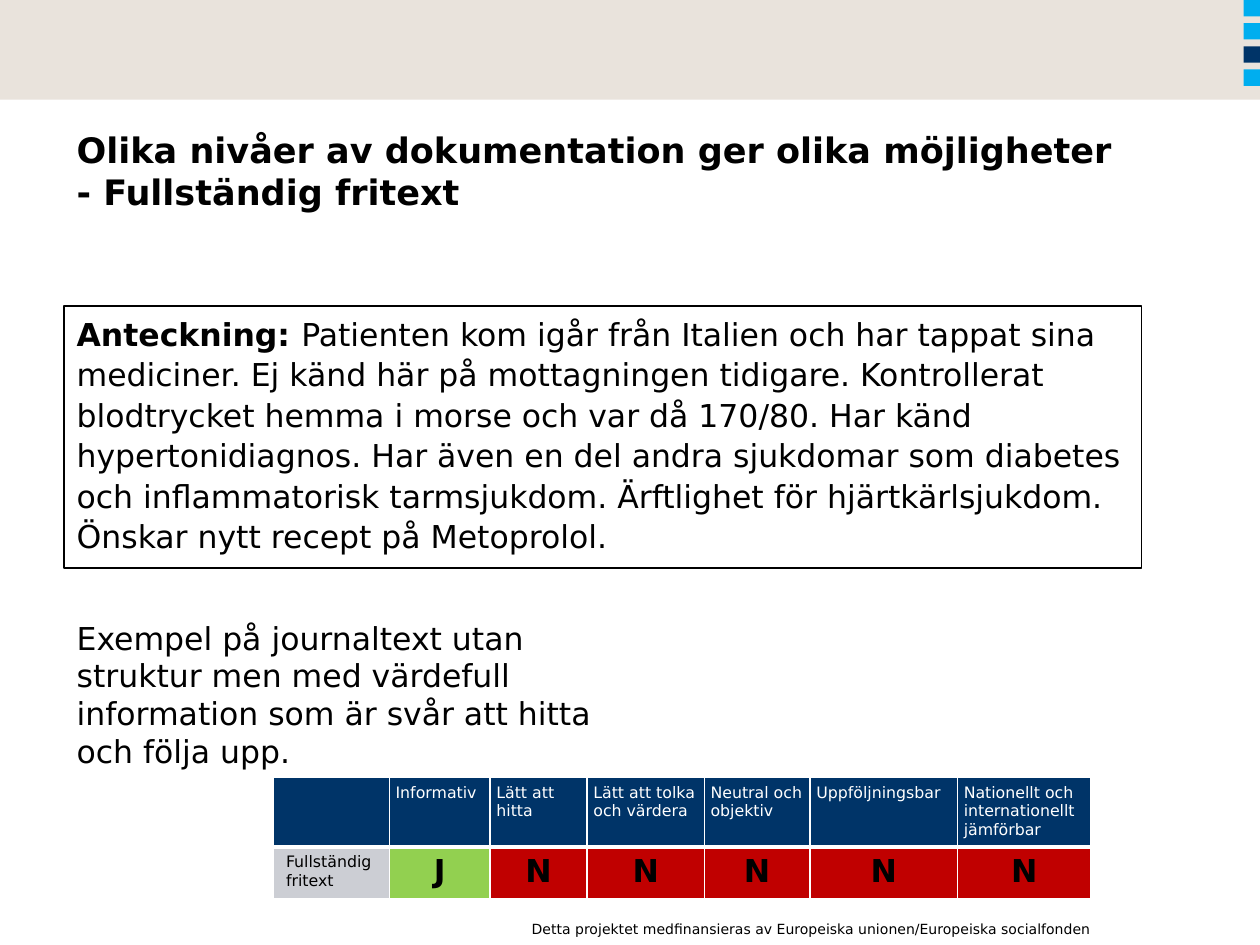
from lxml.etree import SubElement
from pptx import Presentation
from pptx.dml.color import RGBColor
from pptx.enum.shapes import MSO_SHAPE
from pptx.enum.text import MSO_ANCHOR, PP_ALIGN
from pptx.oxml.ns import qn
from pptx.util import Inches, Pt

FONT = "DejaVu Sans"
BLACK = RGBColor(0x00, 0x00, 0x00)
WHITE = RGBColor(0xFF, 0xFF, 0xFF)
BEIGE = RGBColor(0xE9, 0xE3, 0xDC)
CYAN = RGBColor(0x00, 0xAE, 0xEF)
NAVY = RGBColor(0x00, 0x34, 0x68)
GREY = RGBColor(0xCC, 0xCE, 0xD4)
GREEN = RGBColor(0x92, 0xD0, 0x50)
RED = RGBColor(0xC0, 0x00, 0x00)


def add_text(left, top, width, height, text, size, bold=None):
    """Add a wrapped, top-anchored text box and return it."""
    box = slide.shapes.add_textbox(Inches(left), Inches(top), Inches(width), Inches(height))
    frame = box.text_frame
    frame.word_wrap = True
    frame.vertical_anchor = MSO_ANCHOR.TOP
    frame.text = text
    style_font(frame.paragraphs[0].font, size, BLACK, bold)
    return box


def style_font(font, size, color, bold=None):
    font.name = FONT
    font.size = Pt(size)
    font.color.rgb = color
    font.bold = bold


presentation = Presentation()
presentation.slide_width = Inches(10)
presentation.slide_height = Inches(7.5)
slide = presentation.slides.add_slide(presentation.slide_layouts[6])

# Top band and the column of small squares at its right end
blocks = [(0, 0, 10, 0.79, BEIGE)]
for index, color in enumerate([CYAN, CYAN, NAVY, CYAN]):
    blocks.append((9.87, index * 0.184, 0.13, 0.13, color))
for left, top, width, height, color in blocks:
    block = slide.shapes.add_shape(
        MSO_SHAPE.RECTANGLE, Inches(left), Inches(top), Inches(width), Inches(height))
    block.shadow.inherit = False
    block.fill.solid()
    block.fill.fore_color.rgb = color
    block.line.fill.background()

footer = add_text(
    4.01, 7.26, 4.75, 0.24,
    "Detta projektet medfinansieras av Europeiska unionen/Europeiska socialfonden", 8)
footer.text_frame.paragraphs[0].alignment = PP_ALIGN.RIGHT

add_text(0.51, 0.97, 9, 1.25,
         "Olika nivåer av dokumentation ger olika möjligheter\v- Fullständig fritext", 20, True)

# Framed journal note
note = add_text(0.51, 2.43, 8.55, 2.08, "Anteckning: ", 18)
note.line.color.rgb = BLACK
note.line.width = Pt(1)
paragraph = note.text_frame.paragraphs[0]
paragraph.line_spacing = 1.07
paragraph.space_after = Pt(8)
paragraph.runs[0].font.bold = True
paragraph.add_run().text = (
    "Patienten kom igår från Italien och har tappat sina mediciner. "
    "Ej känd här på mottagningen tidigare. Kontrollerat blodtrycket hemma i morse "
    "och var då 170/80. Har känd hypertonidiagnos. Har även en del andra sjukdomar "
    "som diabetes och inflammatorisk tarmsjukdom. Ärftlighet för hjärtkärlsjukdom. "
    "Önskar nytt recept på Metoprolol.")

add_text(0.51, 4.86, 4.42, 1.31,
         "Exempel på journaltext utan struktur men med värdefull information "
         "som är svår att hitta och följa upp.", 18)

# Assessment table
headers = ["", "Informativ", "Lätt att hitta", "Lätt att tolka och värdera",
           "Neutral och objektiv", "Uppföljningsbar",
           "Nationellt och internationellt jämförbar"]
ratings = ["Fullständig fritext", "J", "N", "N", "N", "N", "N"]
rating_fills = {"J": GREEN, "N": RED}
column_widths = [0.92, 0.8, 0.77, 0.93, 0.84, 1.17, 1.06]
row_heights = [0.55, 0.41]

table = slide.shapes.add_table(
    2, len(headers), Inches(2.17), Inches(6.17), Inches(6.5), Inches(0.96)).table
for column, width in zip(table.columns, column_widths):
    column.width = Inches(width)
for row, height in zip(table.rows, row_heights):
    row.height = Inches(height)

for row_index, texts in enumerate([headers, ratings]):
    for column_index, text in enumerate(texts):
        cell = table.cell(row_index, column_index)
        is_header = row_index == 0
        is_rating = text in rating_fills
        cell.text = text
        cell.vertical_anchor = MSO_ANCHOR.TOP
        cell.margin_top = cell.margin_bottom = Inches(0.05)
        if is_header:
            cell.margin_left = cell.margin_right = Inches(0.05)
        paragraph = cell.text_frame.paragraphs[0]
        paragraph.alignment = PP_ALIGN.CENTER if is_rating else PP_ALIGN.LEFT
        style_font(paragraph.font, 18 if is_rating else 9,
                   WHITE if is_header else BLACK, is_rating)

        properties = cell._tc.get_or_add_tcPr()
        for side in ("L", "R", "T", "B"):
            is_divider = (row_index, side) in [(0, "B"), (1, "T")]
            border = SubElement(properties, qn(f"a:ln{side}"), w=str(Pt(3 if is_divider else 1)))
            SubElement(SubElement(border, qn("a:solidFill")), qn("a:srgbClr"), val=str(WHITE))
        cell.fill.solid()
        cell.fill.fore_color.rgb = NAVY if is_header else rating_fills.get(text, GREY)

presentation.save("out.pptx")
